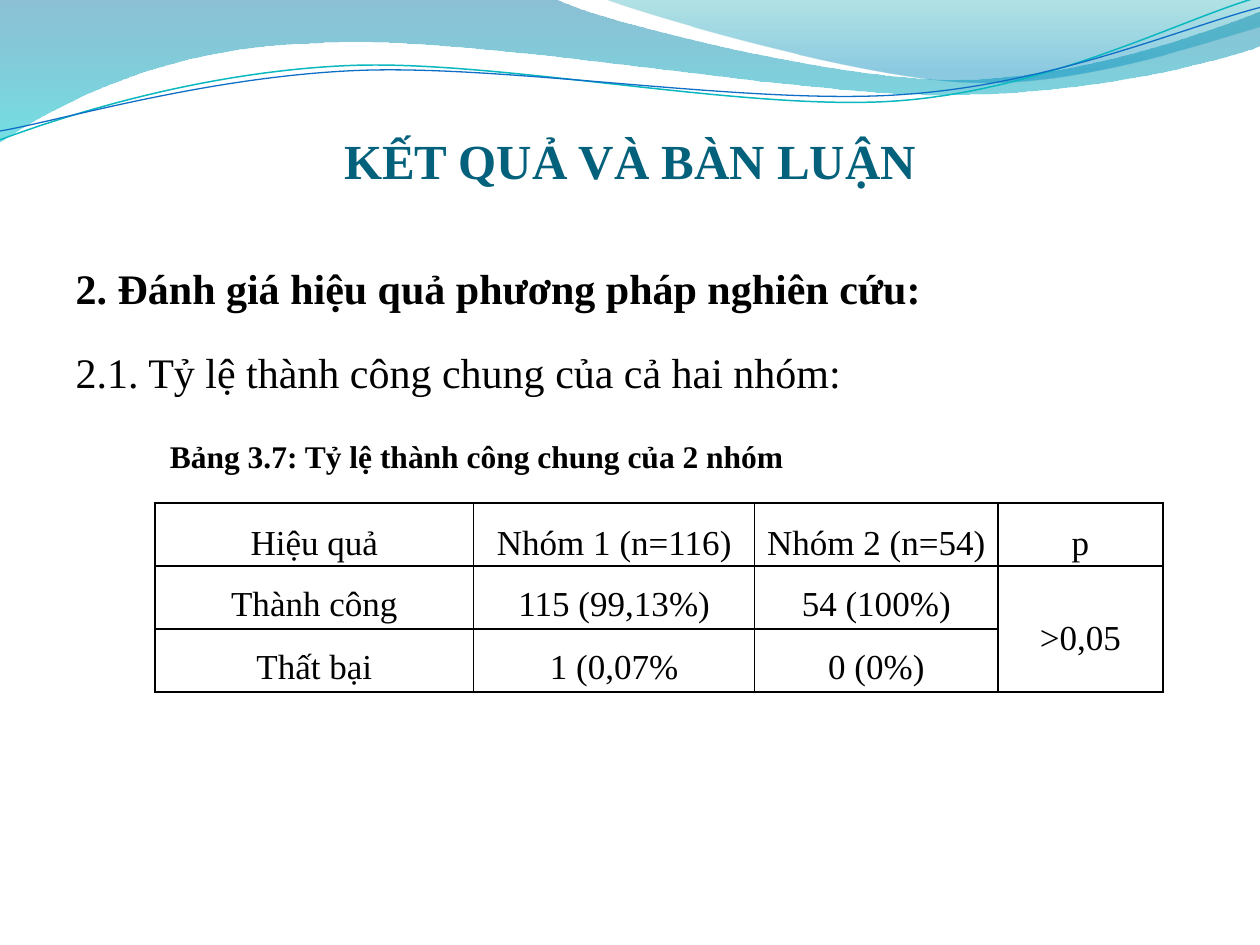
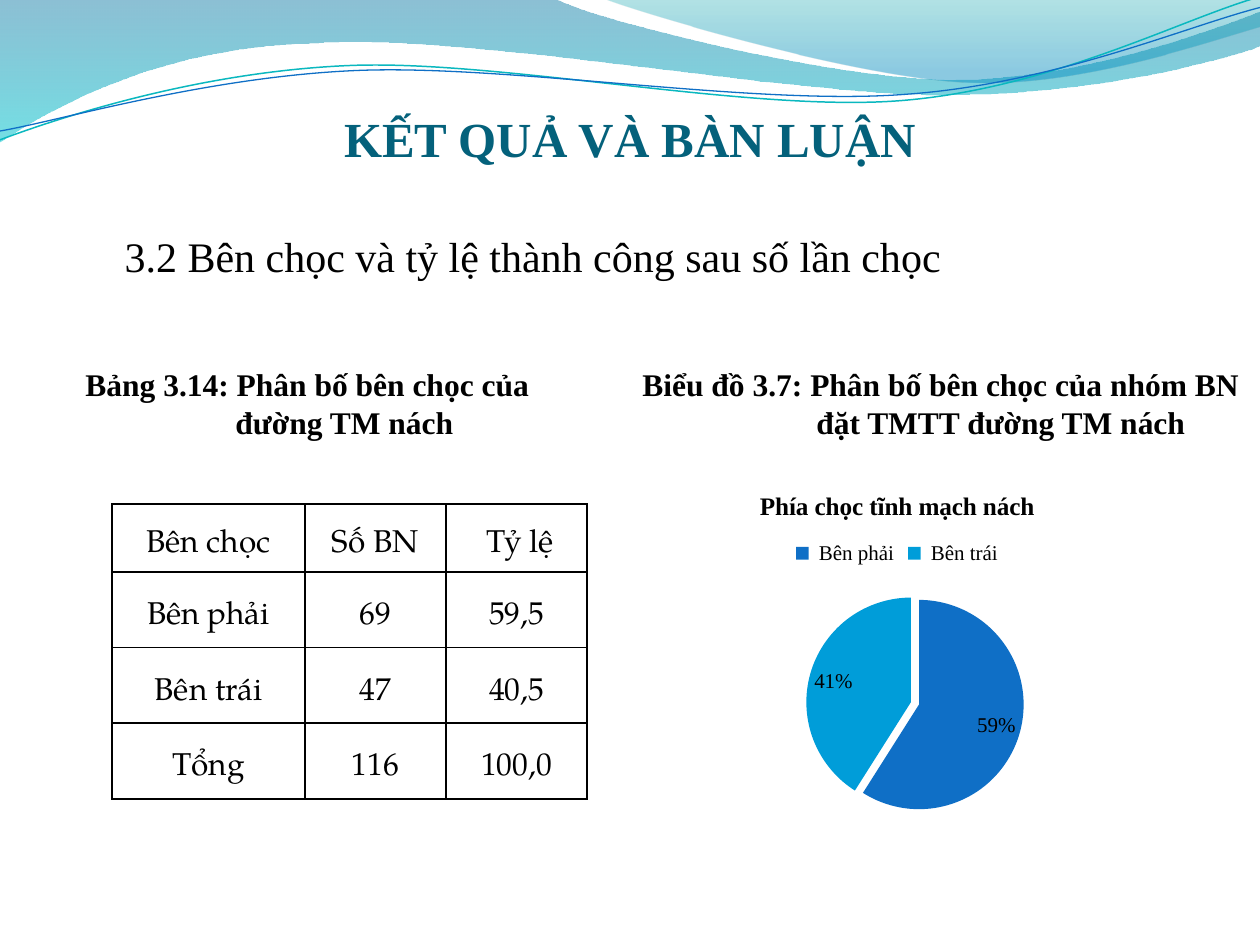
import math

import pptx
import pptx.chart.data
import pptx.dml.color
import pptx.enum.chart
import pptx.enum.text
import pptx.oxml
import pptx.oxml.ns
import pptx.util
from pptx.util import Inches

SERIF = "Times New Roman"
TABLE_SERIF = "TeX Gyre Pagella"
BLACK = "000000"
TITLE_BLUE = "04617B"
DEEP_BLUE = "0F6FC6"
SKY_BLUE = "009DD9"
STROKE_TILT = 2.7
MIDDLE = pptx.enum.text.MSO_ANCHOR.MIDDLE
TOP = pptx.enum.text.MSO_ANCHOR.TOP
CENTER = pptx.enum.text.PP_ALIGN.CENTER
qn = pptx.oxml.ns.qn


def colour(hex_string):
    return pptx.dml.color.RGBColor.from_string(hex_string)


def add_span(para, text, size, bold=False, face=SERIF, ink=BLACK):
    """Add one formatted run to a paragraph."""
    span = para.add_run()
    span.text = text
    span.font.name = face
    span.font.size = pptx.util.Pt(size)
    span.font.bold = bold
    span.font.color.rgb = colour(ink)


deck = pptx.Presentation()
deck.slide_width = Inches(10)
deck.slide_height = Inches(7.5)
success_slide = deck.slides.add_slide(deck.slide_layouts[1])
side_slide = deck.slides.add_slide(deck.slide_layouts[5])

# Waves on the master: start, then lines (2 numbers) and Bézier curves (6);
# bands have gradient stops (position, colour, opacity),
# strokes have (colour, width, centre of their tilt)
waves = [
    ((0, 0),
     [(4.4, -0.01), (4.76, 0.17, 6.64, 0.63, 7.58, 0.63),
      (8.53, 0.63, 9.58, 0.26, 10, 0.09), (10.01, 0.36),
      (9.83, 0.44, 8.7, 0.76, 7.46, 0.75), (6.22, 0.75, 3.82, 0.28, 2.57, 0.34),
      (1.29, 0.36, 0.46, 0.83, -0.01, 1.13), (0, 0)],
     [(0, "0074A1", 45), (1, "00C6CF", 55)], None),
    ((4.79, -0.01),
     [(5.09, 0.11, 6.82, 0.62, 7.69, 0.65), (8.56, 0.69, 9.61, 0.32, 10, 0.21),
      (10, 0), (4.79, -0.01)],
     [(0, "00A1A9", 30), (0.8, "008BBF", 45)], None),
    ((0, 1.11),
     [(0.48, 0.93, 1.58, 0.57, 2.77, 0.52), (3.95, 0.47, 5.93, 0.89, 7.13, 0.8),
      (8.33, 0.71, 9.38, 0.15, 9.98, -0.02)],
     None, ("0AB8BF", 0.85, (4.99, 0.57))),
    ((0, 1.04),
     [(0.47, 0.96, 1.64, 0.61, 2.83, 0.56), (4.03, 0.51, 5.97, 0.84, 7.17, 0.75),
      (8.36, 0.67, 9.41, 0.21, 10, 0.06)],
     None, (DEEP_BLUE, 0.75, (5, 0.59))),
]
for number, (start, segments, stops, stroke) in enumerate(waves):
    points = [start]
    for segment in segments:
        points += zip(segment[::2], segment[1::2])
    if stroke:
        # Lay the stroke level; the shape's rotation tilts it again
        middle_x, middle_y = stroke[2]
        cosine = math.cos(math.radians(STROKE_TILT))
        sine = math.sin(math.radians(STROKE_TILT))
        points = [(middle_x + (x - middle_x) * cosine - (y - middle_y) * sine,
                   middle_y + (x - middle_x) * sine + (y - middle_y) * cosine)
                  for x, y in points]
    corners = [(Inches(x), Inches(y)) for x, y in points]
    builder = success_slide.shapes.build_freeform(*corners[0])
    builder.add_line_segments(corners[1:], close=stroke is None)
    wave = builder.convert_to_shape()
    wave.name = f"Wave {number + 1}"
    wave.shadow.inherit = False

    # Turn each run of three straight steps into one curve
    steps = iter(list(wave.element.iter(qn("a:lnTo"))))
    for segment in segments:
        step = next(steps)
        if len(segment) == 6:
            curve = step.makeelement(qn("a:cubicBezTo"))
            step.addprevious(curve)
            for part in (step, next(steps), next(steps)):
                curve.append(part[0])
                part.getparent().remove(part)

    if stroke:
        wave.rotation = 360 - STROKE_TILT
        wave.fill.background()
        wave.line.color.rgb = colour(stroke[0])
        wave.line.width = pptx.util.Pt(stroke[1])
    else:
        wave.line.fill.background()
        wave.fill.gradient()
        wave.fill.gradient_angle = 270
        for stop, (position, ink, opacity) in zip(wave.fill.gradient_stops, stops):
            stop.position = position
            stop.color.rgb = colour(ink)
        for node, (position, ink, opacity) in zip(wave.element.iter(qn("a:srgbClr")), stops):
            alpha = pptx.oxml.parse_xml(
                f'<a:alpha {pptx.oxml.ns.nsdecls("a")} val="{opacity * 1000}"/>')
            node.append(alpha)
    wave.element.nvSpPr.cNvPr.set("id", str(100 + number))
    deck.slide_master.shapes.element.insert(2 + number, wave.element)

# Titles
for slide, top, height in [(success_slide, 0.77, 0.73), (side_slide, 0.75, 0.58)]:
    title = slide.shapes.title
    title.left, title.top = Inches(0.5), Inches(top)
    title.width, title.height = Inches(9), Inches(height)
    frame = title.text_frame
    frame.auto_size = pptx.enum.text.MSO_AUTO_SIZE.NONE
    frame.vertical_anchor = pptx.enum.text.MSO_ANCHOR.BOTTOM
    frame.margin_left = frame.margin_right = frame.margin_bottom = 0
    frame.margin_top = Inches(0.05)
    frame.paragraphs[0].alignment = CENTER
    add_span(frame.paragraphs[0], "KẾT QUẢ VÀ BÀN LUẬN", 28, True, ink=TITLE_BLUE)

# Headings in the body placeholder
body = success_slide.placeholders[1]
body.left, body.top = Inches(0.5), Inches(1.83)
body.width, body.height = Inches(9), Inches(5.08)
frame = body.text_frame
frame.auto_size = pptx.enum.text.MSO_AUTO_SIZE.NONE
headings = [("2. Đánh giá hiệu quả phương pháp nghiên cứu:", True),
            ("2.1. Tỷ lệ thành công chung của cả hai nhóm:", False)]
for index, (text, bold) in enumerate(headings):
    para = frame.add_paragraph() if index else frame.paragraphs[0]
    para.line_spacing = 1.5
    properties = para._p.get_or_add_pPr()
    properties.set("marL", "0")
    properties.set("indent", "0")
    properties.append(pptx.oxml.parse_xml(f'<a:buNone {pptx.oxml.ns.nsdecls("a")}/>'))
    add_span(para, text, 24, bold)

# Text boxes: slide, place, size, bold, line spacing, lines with their indents
captions = [
    (success_slide, (1.25, 3.42, 5.12, 0.4), 18, True, None,
     [("Bảng 3.7: Tỷ lệ thành công chung của 2 nhóm", 0)]),
    (side_slide, (0.89, 1.58, 6.74, 0.71), 24, False, 1.5,
     [("3.2 Bên chọc và tỷ lệ thành công sau số lần chọc", 0)]),
    (side_slide, (0.58, 2.85, 3.89, 0.71), 18, True, None,
     [("Bảng 3.14: Phân bố bên chọc của", 0), ("đường TM nách", 1.19)]),
    (side_slide, (5, 2.85, 5.05, 0.71), 18, True, None,
     [("Biểu đồ 3.7: Phân bố bên chọc của nhóm BN", 0),
      ("đặt TMTT đường TM nách", 1.38)]),
]
for slide, place, size, bold, spacing, lines in captions:
    box = slide.shapes.add_textbox(*map(Inches, place))
    frame = box.text_frame
    frame.word_wrap = True
    for index, (text, indent) in enumerate(lines):
        para = frame.add_paragraph() if index else frame.paragraphs[0]
        para.line_spacing = spacing
        if indent:
            para._p.get_or_add_pPr().set("marL", str(Inches(indent)))
        add_span(para, text, size, bold)

# Tables: slide, corner, columns, rows, side margin, space before, face, size, cells
tables = [
    (success_slide, (1.23, 3.99), [2.53, 2.23, 1.93, 1.31], [0.49] * 3, 0.07, None,
     SERIF, 20,
     [["Hiệu quả", "Nhóm 1 (n=116)", "Nhóm 2 (n=54)", "p"],
      ["Thành công", "115 (99,13%)", "54 (100%)", ">0,05"],
      ["Thất bại", "1 (0,07%", "0 (0%)", ""]]),
    (side_slide, (0.89, 4), [1.53, 1.12, 1.12], [0.54, 0.6, 0.6, 0.6], 0,
     pptx.util.Pt(6), TABLE_SERIF, 18,
     [["Bên chọc", "Số BN", " Tỷ lệ"],
      ["Bên phải", "69", "59,5"],
      ["Bên trái", "47", "40,5"],
      ["Tổng", "116", "100,0"]]),
]
grids = []
for slide, corner, columns, rows, margin, before, face, size, texts in tables:
    holder = slide.shapes.add_table(len(rows), len(columns), *map(Inches, corner),
                                    Inches(sum(columns)), Inches(sum(rows)))
    grid = holder.table
    grid.first_row = grid.horz_banding = False
    for column, width in zip(grid.columns, columns):
        column.width = Inches(width)
    for row, height, row_texts in zip(grid.rows, rows, texts):
        row.height = Inches(height)
        for cell, text in zip(row.cells, row_texts):
            cell.margin_left = cell.margin_right = Inches(margin)
            cell.margin_top = cell.margin_bottom = 0
            cell.vertical_anchor = MIDDLE
            for side in "LRTB":
                border = pptx.oxml.parse_xml(
                    f'<a:ln{side} {pptx.oxml.ns.nsdecls("a")} w="12700"><a:solidFill>'
                    f'<a:srgbClr val="{BLACK}"/></a:solidFill></a:ln{side}>')
                cell._tc.get_or_add_tcPr().append(border)
            cell.fill.background()
            if text:
                para = cell.text_frame.paragraphs[0]
                para.alignment = CENTER
                para.line_spacing = 1.5
                para.space_before = before
                add_span(para, text, size, face=face)
    grids.append(grid)
success_grid = grids[0]
success_grid.cell(1, 3).merge(success_grid.cell(2, 3))
for column in (1, 2):
    success_grid.cell(0, column).text_frame.paragraphs[0].space_before = pptx.util.Pt(6)
for column in range(3):
    for row in (1, 2):
        success_grid.cell(row, column).vertical_anchor = TOP

# Pie chart of puncture sides
data = pptx.chart.data.CategoryChartData()
data.categories = [" Bên phải", " Bên trái"]
data.add_series("Series 1", [59, 41])
chart = side_slide.shapes.add_chart(
    pptx.enum.chart.XL_CHART_TYPE.PIE, Inches(4.75), Inches(3.74),
    Inches(4.74), Inches(2.88), data).chart
chart.font.name = SERIF
chart.font.size = pptx.util.Pt(12)
chart.font.color.rgb = colour(BLACK)
chart.has_title = True
add_span(chart.chart_title.text_frame.paragraphs[0], "Phía chọc tĩnh mạch nách", 14.4, True)
chart.chart_title.include_in_layout = False
chart.has_legend = True
chart.legend.position = pptx.enum.chart.XL_LEGEND_POSITION.TOP
chart.legend.include_in_layout = False

pie = chart.plots[0]
pie.vary_by_categories = True
for index, ink in enumerate([DEEP_BLUE, SKY_BLUE]):
    slice_fill = pie.series[0].points[index].format.fill
    slice_fill.solid()
    slice_fill.fore_color.rgb = colour(ink)
labels = pie.series[0].data_labels
labels.show_percentage = True
labels.show_value = False
labels.number_format = "0%"
labels.number_format_is_linked = False

chart_ns = pptx.oxml.ns.nsdecls("c")
first_slice = next(chart.element.iter(qn("c:dPt")))
first_slice.addprevious(pptx.oxml.parse_xml(f'<c:explosion {chart_ns} val="4"/>'))
plot_area = next(chart.element.iter(qn("c:plotArea")))
for layout in plot_area.findall(qn("c:layout")):
    plot_area.remove(layout)
plot_area.insert(0, pptx.oxml.parse_xml(
    f'<c:layout {chart_ns}><c:manualLayout><c:layoutTarget val="inner"/>'
    '<c:xMode val="edge"/><c:yMode val="edge"/><c:x val="0.1"/><c:y val="0.34"/>'
    '<c:w val="0.86"/><c:h val="0.6"/></c:manualLayout></c:layout>'))

deck.save("out.pptx")
